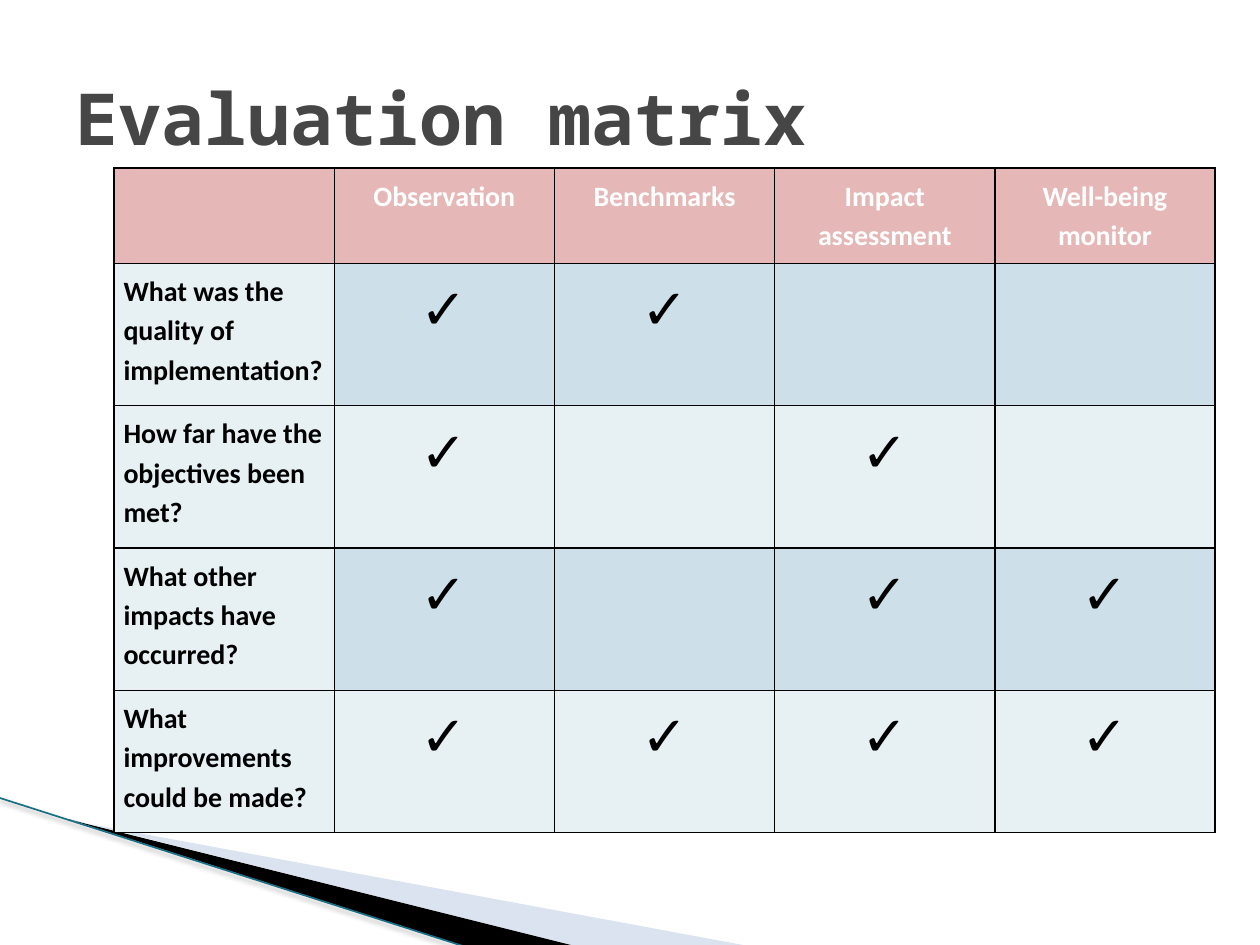
from lxml import etree
from pptx import Presentation
from pptx.dml.color import RGBColor
from pptx.enum.shapes import MSO_CONNECTOR
from pptx.enum.text import MSO_ANCHOR, PP_ALIGN
from pptx.oxml import parse_xml
from pptx.oxml.ns import nsdecls, qn
from pptx.util import Pt

STRAIGHT = MSO_CONNECTOR.STRAIGHT
MIDDLE = MSO_ANCHOR.MIDDLE
LEFT, CENTER = PP_ALIGN.LEFT, PP_ALIGN.CENTER

BLACK = RGBColor(0x00, 0x00, 0x00)
WHITE = RGBColor(0xFF, 0xFF, 0xFF)
TITLE_GRAY = RGBColor(0x46, 0x46, 0x46)
PALE_BLUE = RGBColor(0xA7, 0xB9, 0xDB)
TEAL = RGBColor(0x19, 0x6F, 0x85)
HEADER_PINK = RGBColor(0xE5, 0xB8, 0xB7)
BAND_DARK = RGBColor(0xCD, 0xDF, 0xE8)
BAND_LIGHT = RGBColor(0xE7, 0xF0, 0xF3)

HEADERS = ["", "Observation", "Benchmarks", "Impact assessment", "Well-being monitor"]
QUESTIONS = [
    ("What was the quality of implementation?", (1, 2)),
    ("How far have the objectives been met?", (1, 3)),
    ("What other impacts have occurred?", (1, 3, 4)),
    ("What improvements could be made?", (1, 2, 3, 4)),
]


def add_run(paragraph, text, size, font, color):
    run = paragraph.add_run()
    run.text = text
    run.font.size = Pt(size)
    run.font.name = font
    run.font.bold = True
    run.font.color.rgb = color


def set_frame(shape, left, top, width, height):
    shift_x, shift_y = shape.left - left, shape.top - top
    shape.left, shape.top, shape.width, shape.height = left, top, width, height
    for outline in shape._element.iter(qn("a:path")):
        outline.set("w", str(width))
        outline.set("h", str(height))
    for point in shape._element.iter(qn("a:pt")):
        point.set("x", str(int(point.get("x")) + shift_x))
        point.set("y", str(int(point.get("y")) + shift_y))


def add_wedge(slide, frame, points, color, opacity=None):
    corners = [(Pt(x), Pt(y)) for x, y in points]
    builder = slide.shapes.build_freeform(*corners[0])
    builder.add_line_segments(corners[1:], close=True)
    shape = builder.convert_to_shape()
    set_frame(shape, *map(Pt, frame))
    shape.shadow.inherit = False
    shape.line.fill.background()
    shape.fill.solid()
    shape.fill.fore_color.rgb = color
    if opacity is not None:
        color_element = shape.fill._xPr.find(qn("a:solidFill"))[0]
        etree.SubElement(color_element, qn("a:alpha"), val=str(opacity * 1000))


def add_edge_line(slide, start, end):
    connector = slide.shapes.add_connector(STRAIGHT, *map(Pt, start + end))
    connector.line.color.rgb = TEAL
    connector.line.width = Pt(0.96)
    connector._element.spPr.append(parse_xml(
        f'<a:effectLst {nsdecls("a")}>'
        f'<a:outerShdw blurRad="{Pt(3.1)}" dist="{Pt(1.6)}" dir="5400000" rotWithShape="0">'
        '<a:srgbClr val="000000"><a:alpha val="38000"/></a:srgbClr>'
        '</a:outerShdw></a:effectLst>'))


def add_title(slide, text):
    text_frame = slide.shapes.add_textbox(Pt(36), Pt(21.6), Pt(648), Pt(90)).text_frame
    text_frame.word_wrap = True
    text_frame.vertical_anchor = MIDDLE
    add_run(text_frame.paragraphs[0], text, 41, "Noto Sans Mono", TITLE_GRAY)


def add_borders(cell):
    properties = cell._tc.get_or_add_tcPr()
    for side in ("lnL", "lnR", "lnT", "lnB"):
        properties.append(parse_xml(
            f'<a:{side} {nsdecls("a")} w="{Pt(0.96)}"><a:solidFill>'
            f'<a:srgbClr val="{BLACK}"/></a:solidFill></a:{side}>'))


def fill_cell(cell, text, fill, size=16, font="Calibri", color=BLACK, alignment=CENTER):
    add_borders(cell)
    cell.fill.solid()
    cell.fill.fore_color.rgb = fill
    cell.margin_left = cell.margin_right = Pt(5.4)
    cell.margin_top = cell.margin_bottom = Pt(3.6)
    if text:
        paragraph = cell.text_frame.paragraphs[0]
        paragraph.alignment = alignment
        paragraph.line_spacing = 1.15
        add_run(paragraph, text, size, font, color)


def add_matrix(slide):
    row_count, column_count = len(QUESTIONS) + 1, len(HEADERS)
    table = slide.shapes.add_table(
        row_count, column_count, Pt(65.2), Pt(96.1), Pt(629.25), Pt(379.8)).table
    for column in table.columns:
        column.width = Pt(125.85)
    for index, row in enumerate(table.rows):
        row.height = Pt(81.35 if index else 54.4)
    for index, header in enumerate(HEADERS):
        fill_cell(table.cell(0, index), header, HEADER_PINK, color=WHITE)
    for row, (question, checked) in enumerate(QUESTIONS, start=1):
        fill_cell(table.cell(row, 0), question, BAND_LIGHT, alignment=LEFT)
        band = BAND_DARK if row % 2 else BAND_LIGHT
        for column in range(1, column_count):
            mark = "✓" if column in checked else ""
            fill_cell(table.cell(row, column), mark, band, size=32, font="Arial")


def main():
    presentation = Presentation()
    presentation.slide_width, presentation.slide_height = Pt(720), Pt(540)
    slide = presentation.slides.add_slide(presentation.slide_layouts[6])
    add_wedge(slide, (56.2, 393.8, 299.5, 113.8),
              [(39.6, 468.7), (428.4, 540.7), (328.3, 540.7), (39.6, 468)], PALE_BLUE, 40)
    add_wedge(slide, (-4.3, 455.8, 299.5, 66.2),
              [(38.2, 468), (329, 540.7), (267.8, 541.4), (38.9, 468)], BLACK)
    add_edge_line(slide, (-0.7, 455.8), (267.1, 541.4))
    add_title(slide, "Evaluation matrix")
    add_matrix(slide)
    presentation.save("out.pptx")


if __name__ == "__main__":
    main()
